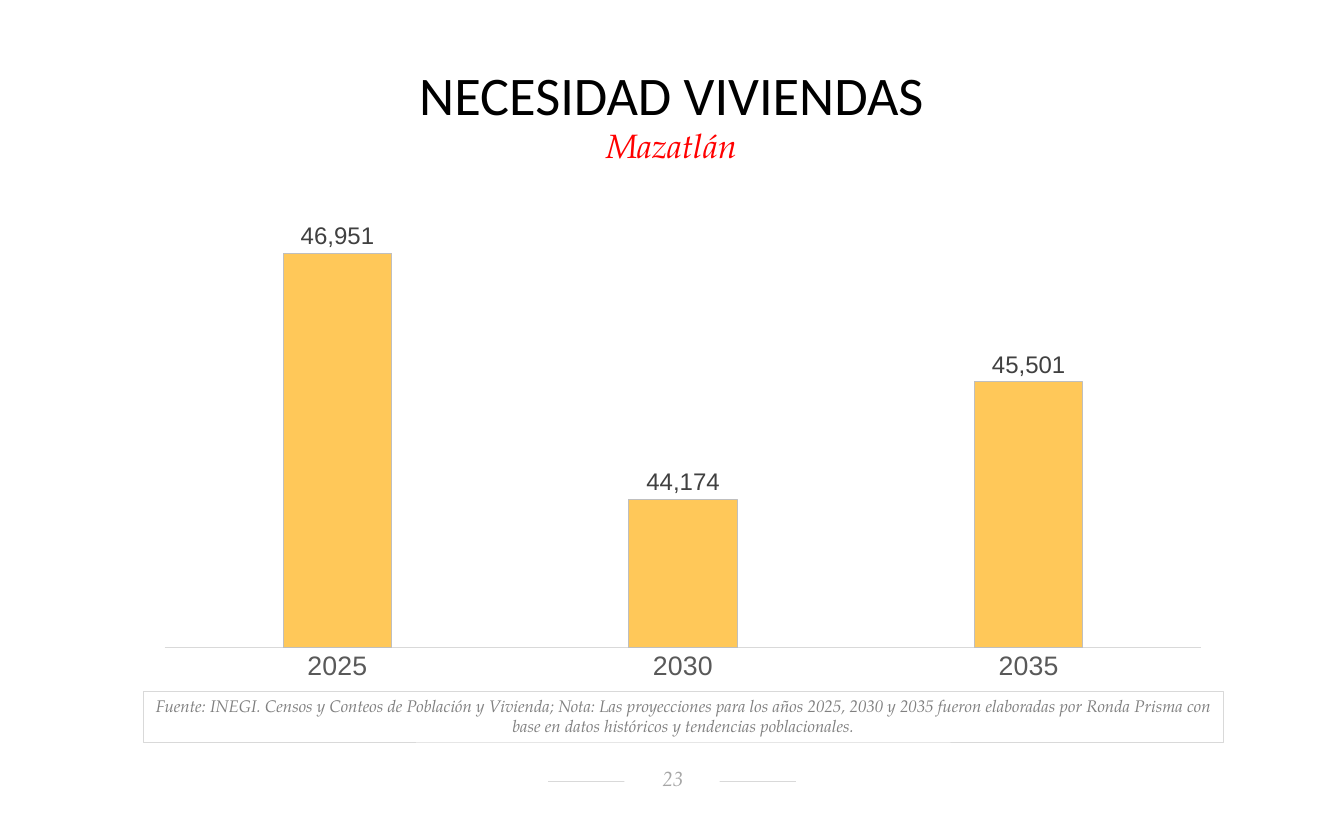
from lxml import etree
from pptx import Presentation
from pptx import util as u
from pptx.chart import data as cd
from pptx.dml import color
from pptx.enum import chart as ce
from pptx.enum import shapes, text
from pptx.oxml import ns

SERIF = "TeX Gyre Pagella"
GREY = "D9D9D9"


def rgb(value):
    return color.RGBColor.from_string(value)


def inches(box):
    return [u.Inches(v) for v in box]


def set_line(line, value):
    line.color.rgb = rgb(value)
    line.width = u.Pt(0.75)


def set_font(font, name, size, value, italic=False):
    font.name = name
    font.size = u.Pt(size)
    font.color.rgb = rgb(value)
    font.italic = italic


def add_text(s, box, content, *, font=SERIF, size, fill=None, line=None, colour,
             italic=True, spacing=None, after=0, insets=(0.1, 0.05, 0.1, 0.05),
             anchor=text.MSO_ANCHOR.TOP, grow=True):
    if fill or line:
        sp = s.shapes.add_shape(shapes.MSO_SHAPE.RECTANGLE, *inches(box))
        sp.shadow.inherit = False
        if fill:
            sp.fill.solid()
            sp.fill.fore_color.rgb = rgb(fill)
        else:
            sp.fill.background()
        if line:
            set_line(sp.line, line)
        else:
            sp.line.fill.background()
    else:
        sp = s.shapes.add_textbox(*inches(box))
    tf = sp.text_frame
    tf.word_wrap = True
    tf.vertical_anchor = anchor
    tf.auto_size = text.MSO_AUTO_SIZE.SHAPE_TO_FIT_TEXT if grow else text.MSO_AUTO_SIZE.NONE
    tf.margin_left, tf.margin_top, tf.margin_right, tf.margin_bottom = inches(insets)
    p = tf.paragraphs[0]
    p.alignment = text.PP_ALIGN.CENTER
    p.line_spacing = spacing
    p.space_after = u.Pt(after)
    r = p.add_run()
    r.text = content
    set_font(r.font, font, size, colour, italic)
    return sp


def add_page_number(s, box, number):
    left, top, width, height = box
    middle = top + 0.16
    rule = s.shapes.add_connector(
        shapes.MSO_CONNECTOR.STRAIGHT,
        *inches((left, middle, left + width, middle)))
    set_line(rule.line, GREY)
    etree.SubElement(rule._element.spPr, ns.qn("a:effectLst"))
    label = 0.99
    add_text(s, (left + (width - label) / 2, top, label, height), number,
             size=15.4, colour="A6A6A6", fill="FFFFFF", grow=False,
             insets=(0.11, 0.02, 0.09, 0.05), anchor=text.MSO_ANCHOR.MIDDLE)


def add_heading(s, box, title, place):
    left, top, width, height = box
    add_text(s, (left, top, width, 0.6), title, font="Calibri", size=40.8,
             colour="000000", italic=False, spacing=0.7,
             insets=(0.12, 0.06, 0.12, 0.06))
    add_text(s, (left, top + height - 0.53, width, 0.53), place, size=25.2,
             colour="FF0000", after=4.2)


def add_housing_chart(s, box, years, homes):
    data = cd.CategoryChartData(number_format="#,##0")
    data.categories = years
    data.add_series("Series 1", homes)
    chart = s.shapes.add_chart(
        ce.XL_CHART_TYPE.COLUMN_CLUSTERED, *inches(box), data).chart
    chart.has_legend = False
    chart.has_title = False
    set_font(chart.font, "Calibri", 10, "000000")

    axis = chart.category_axis
    axis.major_tick_mark = axis.minor_tick_mark = ce.XL_TICK_MARK.NONE
    set_font(axis.tick_labels.font, "Arial", 20, "595959")
    set_line(axis.format.line, GREY)

    axis = chart.value_axis
    axis.minimum_scale = 42500
    axis.maximum_scale = 47500
    axis.has_major_gridlines = False
    axis.visible = False

    plot = chart.plots[0]
    plot.gap_width = 219
    plot.overlap = -27
    plot.vary_by_categories = False
    bars = plot.series[0]
    bars.format.fill.solid()
    bars.format.fill.fore_color.rgb = rgb("FFC859")
    set_line(bars.format.line, "BFBFBF")
    labels = bars.data_labels
    labels.show_value = True
    labels.number_format = "#,##0"
    labels.number_format_is_linked = False
    labels.position = ce.XL_LABEL_POSITION.OUTSIDE_END
    set_font(labels.font, "Arial", 18, "404040")


def main():
    prs = Presentation()
    prs.slide_width, prs.slide_height = inches((14, 8.5))
    s = prs.slides.add_slide(prs.slide_layouts[6])
    add_page_number(s, (5.71, 7.98, 2.58, 0.29), "23")
    add_text(s, (1.49, 7.2, 11.25, 0.53),
             "Fuente: INEGI. Censos y Conteos de Población y Vivienda; Nota: "
             "Las proyecciones para los años 2025, 2030 y 2035 fueron elaboradas "
             "por Ronda Prisma con base en datos históricos y tendencias poblacionales.",
             size=12.6, colour="808080", line=GREY)
    add_heading(s, (0.49, 0.76, 13.01, 1.02), "NECESIDAD VIVIENDAS", "Mazatlán")
    add_housing_chart(s, (1.49, 2.03, 11.25, 5.17),
                      ("2025", "2030", "2035"), (46951, 44174, 45501))
    prs.save("out.pptx")


if __name__ == "__main__":
    main()
